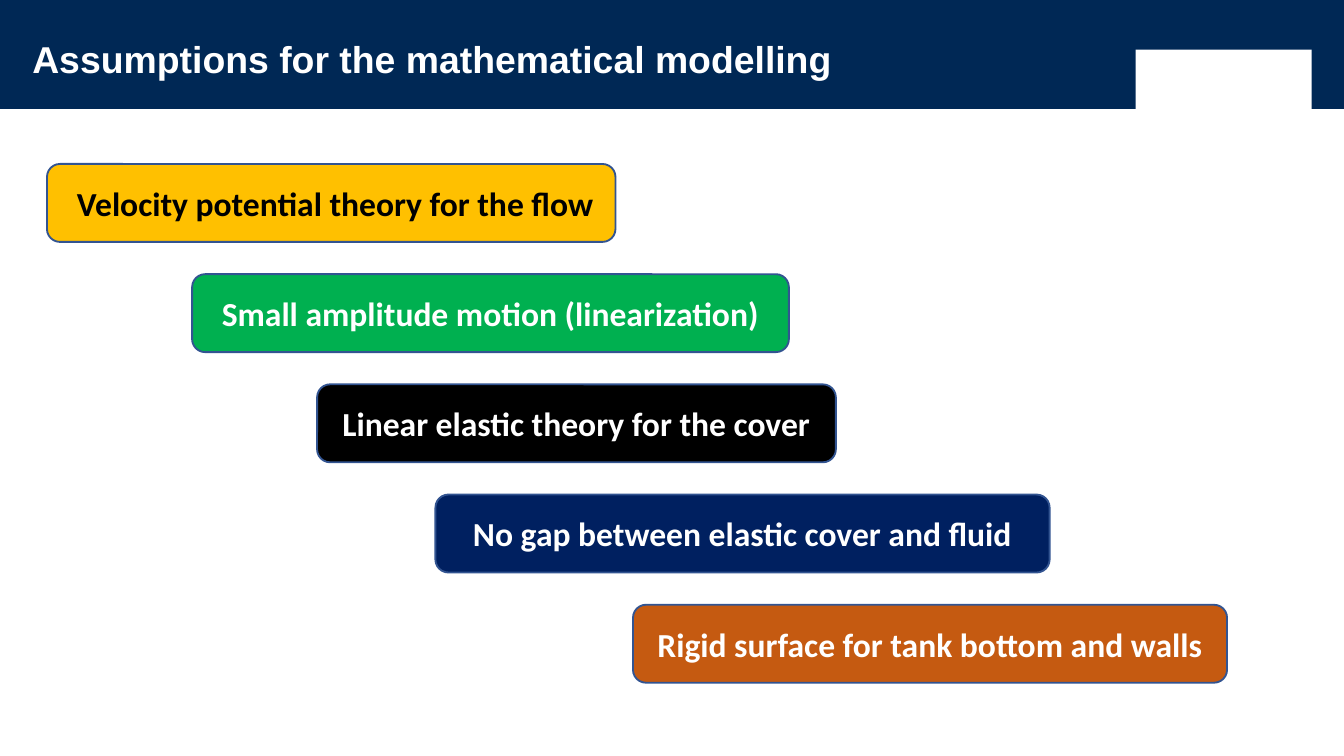
from dataclasses import dataclass

from pptx import Presentation
from pptx import util as u
from pptx.dml.color import RGBColor
from pptx.enum import shapes, text
from pptx.shapes.autoshape import Shape
from pptx.slide import Slide

WIDTH = 10
HEIGHT = WIDTH * 9 / 16
FIRST_ROW, ROW_PITCH, ROW_HEIGHT = 1.22, 0.82, 0.58
BANNER_HEIGHT = 0.81


@dataclass(frozen=True)
class Theme:
    banner: str = "002855"
    outline: str = "325491"
    light: str = "FFFFFF"
    dark: str = "000000"
    amber: str = "FFC000"
    green: str = "00B050"
    navy: str = "002060"
    rust: str = "C55A11"
    title_font: str = "Arial"
    step_font: str = "Calibri"
    title_size: int = 20
    step_size: int = 18


THEME = Theme()


@dataclass(frozen=True)
class Assumption:
    wording: str
    left: float
    width: float
    fill: str
    ink: str = THEME.light
    inset: float = 0.1


ASSUMPTIONS = [
    Assumption("Velocity potential theory for the flow", 0.35, 4.23, THEME.amber, THEME.dark, 0.16),
    Assumption("Small amplitude motion (linearization)", 1.43, 4.44, THEME.green),
    Assumption("Linear elastic theory for the cover", 2.36, 3.86, THEME.dark),
    Assumption("No gap between elastic cover and fluid", 3.24, 4.57, THEME.navy),
    Assumption("Rigid surface for tank bottom and walls", 4.71, 4.42, THEME.rust),
]


def add_block(slide: Slide, preset: shapes.MSO_SHAPE, left: float, top: float,
              width: float, height: float, fill: str) -> Shape:
    """Add a flat filled shape without an outline."""
    block = slide.shapes.add_shape(
        preset, u.Inches(left), u.Inches(top), u.Inches(width), u.Inches(height))
    block.shadow.inherit = False
    block.fill.solid()
    block.fill.fore_color.rgb = RGBColor.from_string(fill)
    block.line.fill.background()
    return block


def write(shape: Shape, wording: str, font: str, size: int, ink: str,
          align: text.PP_ALIGN) -> None:
    paragraph = shape.text_frame.paragraphs[0]
    paragraph.text = wording
    paragraph.alignment = align
    paragraph.font.name = font
    paragraph.font.size = u.Pt(size)
    paragraph.font.bold = True
    paragraph.font.color.rgb = RGBColor.from_string(ink)


def add_header(slide: Slide, wording: str) -> None:
    title = slide.shapes.title
    banner = add_block(slide, shapes.MSO_SHAPE.RECTANGLE, 0, 0, WIDTH, BANNER_HEIGHT, THEME.banner)
    title.element.addprevious(banner.element)
    add_block(slide, shapes.MSO_SHAPE.RECTANGLE, 8.45, 0.37, 1.31, 0.45, THEME.light)

    title.left, title.top = u.Inches(0.24), u.Inches(0.33)
    title.width, title.height = u.Inches(6), u.Inches(0.32)
    frame = title.text_frame
    frame.margin_left = frame.margin_right = frame.margin_top = frame.margin_bottom = 0
    frame.vertical_anchor = text.MSO_ANCHOR.TOP
    frame.auto_size = text.MSO_AUTO_SIZE.NONE
    write(title, wording, THEME.title_font, THEME.title_size, THEME.light, text.PP_ALIGN.LEFT)
    frame.paragraphs[0].line_spacing = 0.8


def add_assumption(slide: Slide, row: int, item: Assumption) -> None:
    step = add_block(slide, shapes.MSO_SHAPE.ROUNDED_RECTANGLE, item.left,
                     FIRST_ROW + row * ROW_PITCH, item.width, ROW_HEIGHT, item.fill)
    step.line.color.rgb = RGBColor.from_string(THEME.outline)
    step.line.width = u.Pt(1)
    step.text_frame.margin_left = u.Inches(item.inset)
    step.text_frame.vertical_anchor = text.MSO_ANCHOR.MIDDLE
    write(step, item.wording, THEME.step_font, THEME.step_size, item.ink, text.PP_ALIGN.CENTER)


def main() -> None:
    deck = Presentation()
    deck.slide_width, deck.slide_height = u.Inches(WIDTH), u.Inches(HEIGHT)
    slide = deck.slides.add_slide(deck.slide_layouts.get_by_name("Title Only"))
    add_header(slide, "Assumptions for the mathematical modelling")
    for row, item in enumerate(ASSUMPTIONS):
        add_assumption(slide, row, item)
    deck.save("out.pptx")


if __name__ == "__main__":
    main()
